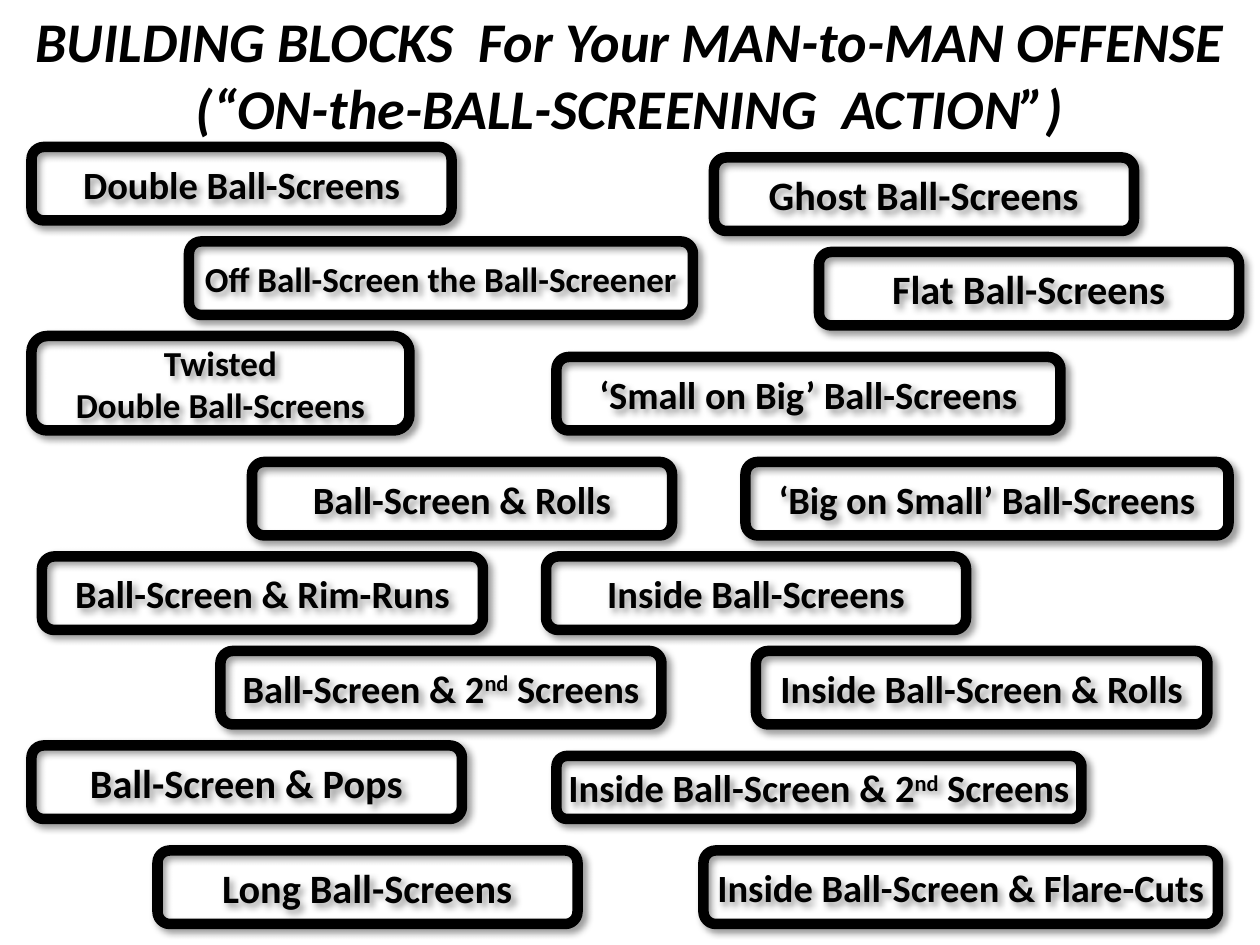
from lxml.etree import SubElement
from pptx import Presentation
from pptx.dml.color import RGBColor
from pptx.enum.shapes import MSO_SHAPE as Shape
from pptx.enum.text import MSO_ANCHOR as Anchor, MSO_AUTO_SIZE as AutoSize, PP_ALIGN as Align
from pptx.oxml.ns import qn
from pptx.util import Inches, Pt

COLORS = {"ink": "000000", "paper": "FFFFFF"}
GRID = 12  # block positions and sizes are counted in twelfths of an inch

TITLE = "BUILDING BLOCKS  For Your MAN-to-MAN OFFENSE (“ON-the-BALL-SCREENING  ACTION”)"

# Label (^ encloses superscript), font size, left, top, width, height
BLOCKS = [
    ("Double Ball-Screens", 22, 3, 14, 40, 7),
    ("Ghost Ball-Screens", 23, 68, 15, 40, 7),
    ("Off Ball-Screen the Ball-Screener", 20, 18, 23, 48, 7),
    ("Flat Ball-Screens", 23, 78, 24, 40, 7),
    ("Twisted\nDouble Ball-Screens", 20, 3, 32, 36, 9),
    ("‘Small on Big’ Ball-Screens", 22, 53, 34, 48, 7),
    ("Ball-Screen & Rolls", 22, 24, 44, 40, 7),
    ("‘Big on Small’ Ball-Screens", 22, 71, 44, 46, 7),
    ("Ball-Screen & Rim-Runs", 22, 4, 53, 42, 7),
    ("Inside Ball-Screens", 22, 52, 53, 40, 7),
    ("Ball-Screen & 2^nd^ Screens", 22, 21, 62, 42, 7),
    ("Inside Ball-Screen & Rolls", 22, 72, 62, 43, 7),
    ("Ball-Screen & Pops", 23, 3, 71, 41, 7),
    ("Inside Ball-Screen & 2^nd^ Screens", 22, 53, 72, 50, 6),
    ("Long Ball-Screens", 23, 15, 81, 40, 7),
    ("Inside Ball-Screen & Flare-Cuts", 22, 67, 81, 49, 7),
]


def color(key):
    return RGBColor.from_string(COLORS[key])


def apply(target, values):
    for attribute, value in values.items():
        setattr(target, attribute, value)


class BlockSlide:
    font = {"name": "Calibri", "bold": True}
    title_frame = {"word_wrap": True, "auto_size": AutoSize.NONE, "vertical_anchor": Anchor.TOP}
    block_frame = {"word_wrap": False, "vertical_anchor": Anchor.MIDDLE}

    def __init__(self, deck):
        self.slide = deck.slides.add_slide(deck.slide_layouts[5])
        background = self.slide.background.fill
        background.solid()
        background.fore_color.rgb = color("paper")

    def add_text(self, paragraph, text, size, **extra):
        paragraph.alignment = Align.CENTER
        for index, part in enumerate(text.split("^")):
            run = paragraph.add_run()
            run.text = part
            apply(run.font, {**self.font, "size": Pt(size), **extra})
            run.font.color.rgb = color("ink")
            if index % 2:
                run.font._element.set("baseline", "30000")

    def title(self, text, size):
        heading = self.slide.shapes.title
        apply(heading, {"left": 0, "top": 0, "width": Inches(10), "height": Inches(1.18)})
        apply(heading.text_frame, self.title_frame)
        self.add_text(heading.text_frame.paragraphs[0], text, size, italic=True)

    def block(self, label, size, *box):
        block = self.slide.shapes.add_shape(
            Shape.FLOWCHART_ALTERNATE_PROCESS, *(Inches(n / GRID) for n in box))
        block.fill.background()
        block.line.color.rgb = color("ink")
        block.line.width = Pt(6)
        self.shadow(block)
        frame = block.text_frame
        apply(frame, self.block_frame)
        for index, line in enumerate(label.split("\n")):
            paragraph = frame.add_paragraph() if index else frame.paragraphs[0]
            self.add_text(paragraph, line, size)

    def shadow(self, block):
        block.shadow.inherit = False
        effects = block._element.spPr.find(qn("a:effectLst"))
        outer = SubElement(effects, qn("a:outerShdw"), blurRad=str(Pt(4)), dist=str(Pt(3)),
                           dir="2700000", algn="tl", rotWithShape="0")
        tint = SubElement(outer, qn("a:srgbClr"), val=COLORS["ink"])
        SubElement(tint, qn("a:alpha"), val="40000")


def main():
    deck = Presentation()
    apply(deck, {"slide_width": Inches(10), "slide_height": Inches(7.5)})
    page = BlockSlide(deck)

    # Heading
    page.title(TITLE, 32)

    # Building blocks, from top to bottom
    for block in BLOCKS:
        page.block(*block)

    deck.save("out.pptx")


if __name__ == "__main__":
    main()
